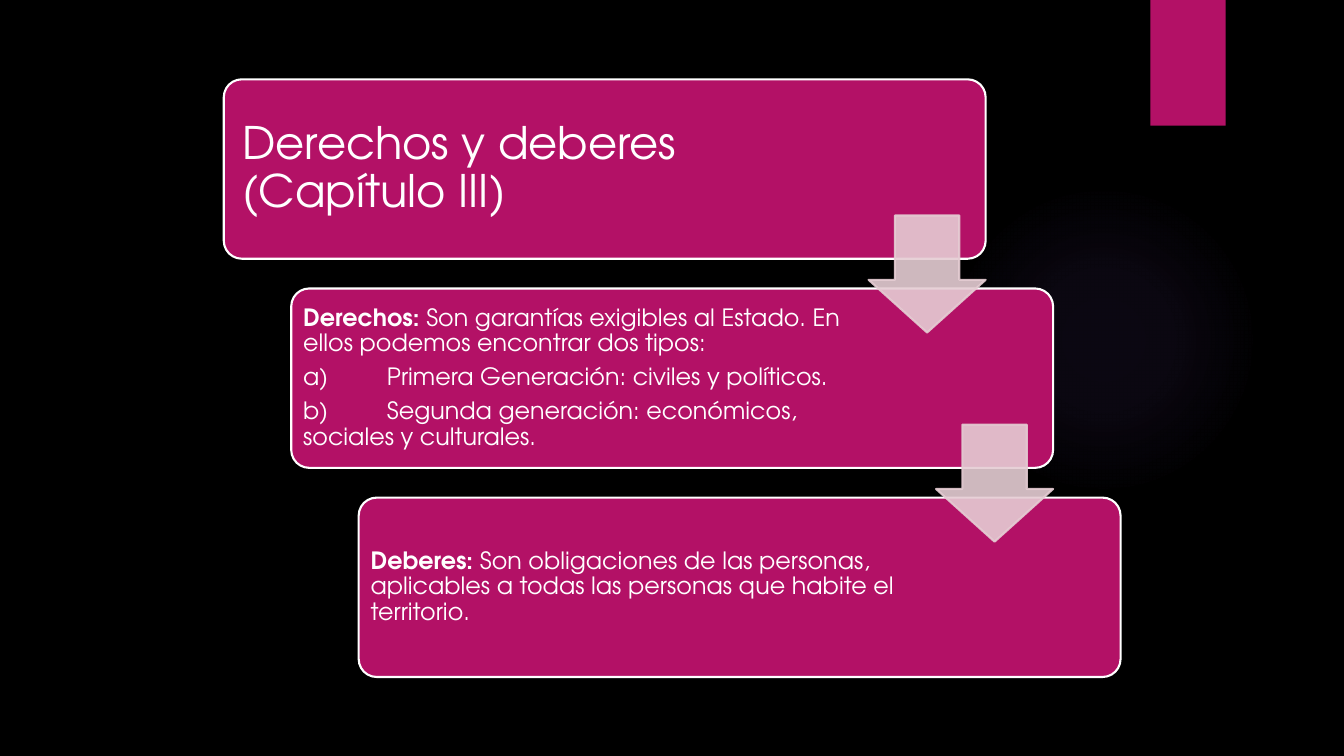
from lxml.etree import SubElement
from pptx import Presentation
from pptx.dml.color import RGBColor
from pptx.enum.shapes import MSO_SHAPE
from pptx.enum.text import MSO_ANCHOR, PP_ALIGN
from pptx.oxml import parse_xml
from pptx.oxml.ns import nsdecls, qn
from pptx.util import Cm, Pt

FONT = "TeX Gyre Adventor"
MAGENTA, PINK, WHITE, VIOLET = "B31166", "E5CCD3", "FFFFFF", "9B6BF2"
CARD_LEFT, CARD_TOP, CARD_WIDTH, CARD_HEIGHT = 5.64, 2.0, 19.2, 4.52
STEP_X, STEP_Y = 1.7, 5.27
ARROW_SIZE, ARROW_DROP = 2.95, 3.43
TEXT_MARGIN_RIGHT = 4.62
TAB_STOP = 2.11

CARDS = [
    (32, 0.34, [[("Derechos y deberes (Capítulo III)", False)]]),
    (17, 0.17, [
        [("Derechos: ", True),
         ("Son garantías exigibles al Estado. En ellos podemos encontrar dos tipos:", False)],
        [("a)\tPrimera Generación: civiles y políticos.", False)],
        [("b)\tSegunda generación: económicos, sociales y culturales.", False)],
    ]),
    (17, 0.17, [
        [("Deberes: ", True),
         ("Son obligaciones de las personas, aplicables a todas las personas "
          "que habite el territorio.", False)],
    ]),
]


def color(value):
    """Turn a hex string into a colour."""
    return RGBColor.from_string(value)


def apply_format(target, values):
    """Set each attribute named in a dict."""
    for name, value in values.items():
        setattr(target, name, value)


def add_block(page, kind, left, top, width, height, fill=None, line=None):
    """Add a preset shape, measured in centimetres, without shadow."""
    block = page.shapes.add_shape(kind, Cm(left), Cm(top), Cm(width), Cm(height))
    block.shadow.inherit = False
    if fill:
        block.fill.solid()
        block.fill.fore_color.rgb = color(fill)
    if line:
        block.line.color.rgb = color(line)
        block.line.width = Pt(1.5)
    else:
        block.line.fill.background()
    return block


def add_glow(page):
    """Add the faint round glow on the right."""
    glow = add_block(page, MSO_SHAPE.OVAL, 23.9, 4.65, 7.82, 7.82)
    stops = "".join(
        f'<a:gs pos="{place * 1000}"><a:srgbClr val="{VIOLET}">'
        f'<a:alpha val="{alpha * 1000}"/></a:srgbClr></a:gs>'
        for place, alpha in ((0, 7), (36, 6), (69, 0)))
    gradient = parse_xml(
        f'<a:gradFill {nsdecls("a")}><a:gsLst>{stops}</a:gsLst><a:path path="circle">'
        '<a:fillToRect l="50000" t="50000" r="50000" b="50000"/></a:path></a:gradFill>')
    glow._element.spPr.find(qn("a:prstGeom")).addnext(gradient)


def add_tab_stop(para, distance):
    """Give a paragraph one left tab stop."""
    tabs = SubElement(para._p.get_or_add_pPr(), qn("a:tabLst"))
    SubElement(tabs, qn("a:tab"), pos=str(Cm(distance)), algn="l")


def add_card(page, left, top, size, margin, paragraphs):
    """Add a rounded card holding its own text."""
    card = add_block(page, MSO_SHAPE.ROUNDED_RECTANGLE, left, top,
                     CARD_WIDTH, CARD_HEIGHT, MAGENTA, WHITE)
    card.adjustments[0] = 0.1
    frame = card.text_frame
    apply_format(frame, {
        "word_wrap": True, "vertical_anchor": MSO_ANCHOR.MIDDLE,
        "margin_left": Cm(margin), "margin_top": Cm(margin),
        "margin_bottom": Cm(margin), "margin_right": Cm(TEXT_MARGIN_RIGHT + margin)})
    for index, runs in enumerate(paragraphs):
        para = frame.add_paragraph() if index else frame.paragraphs[0]
        apply_format(para, {"alignment": PP_ALIGN.LEFT, "line_spacing": 0.9,
                            "space_after": Pt(round(size * 0.35))})
        if "\t" in runs[0][0]:
            add_tab_stop(para, TAB_STOP)
        for text, bold in runs:
            span = para.add_run()
            span.text = text
            apply_format(span.font, {"name": FONT, "size": Pt(size), "bold": bold})
            span.font.color.rgb = color(WHITE)


def add_arrow(page, left, top):
    """Add a slightly transparent arrow pointing down."""
    arrow = add_block(page, MSO_SHAPE.DOWN_ARROW, left, top,
                      ARROW_SIZE, ARROW_SIZE, PINK, PINK)
    arrow.adjustments[0] = 0.55
    arrow.adjustments[1] = 0.45
    for tint in arrow._element.spPr.iter(qn("a:srgbClr")):
        SubElement(tint, qn("a:alpha"), val="90000")


def main():
    """Build the slide and save it."""
    deck = Presentation()
    apply_format(deck, {"slide_width": Cm(33.87), "slide_height": Cm(19.05)})
    page = deck.slides.add_slide(deck.slide_layouts[6])
    page.background.fill.solid()
    page.background.fill.fore_color.rgb = color("000000")
    add_glow(page)
    add_block(page, MSO_SHAPE.RECTANGLE, 28.99, 0, 1.9, 3.17, MAGENTA)
    corners = [(CARD_LEFT + STEP_X * step, CARD_TOP + STEP_Y * step)
               for step in range(len(CARDS))]
    for (left, top), card in zip(corners, CARDS):
        add_card(page, left, top, *card)
    for left, top in corners[:-1]:
        add_arrow(page, left + CARD_WIDTH - ARROW_SIZE, top + ARROW_DROP)
    deck.save("out.pptx")


if __name__ == "__main__":
    main()
